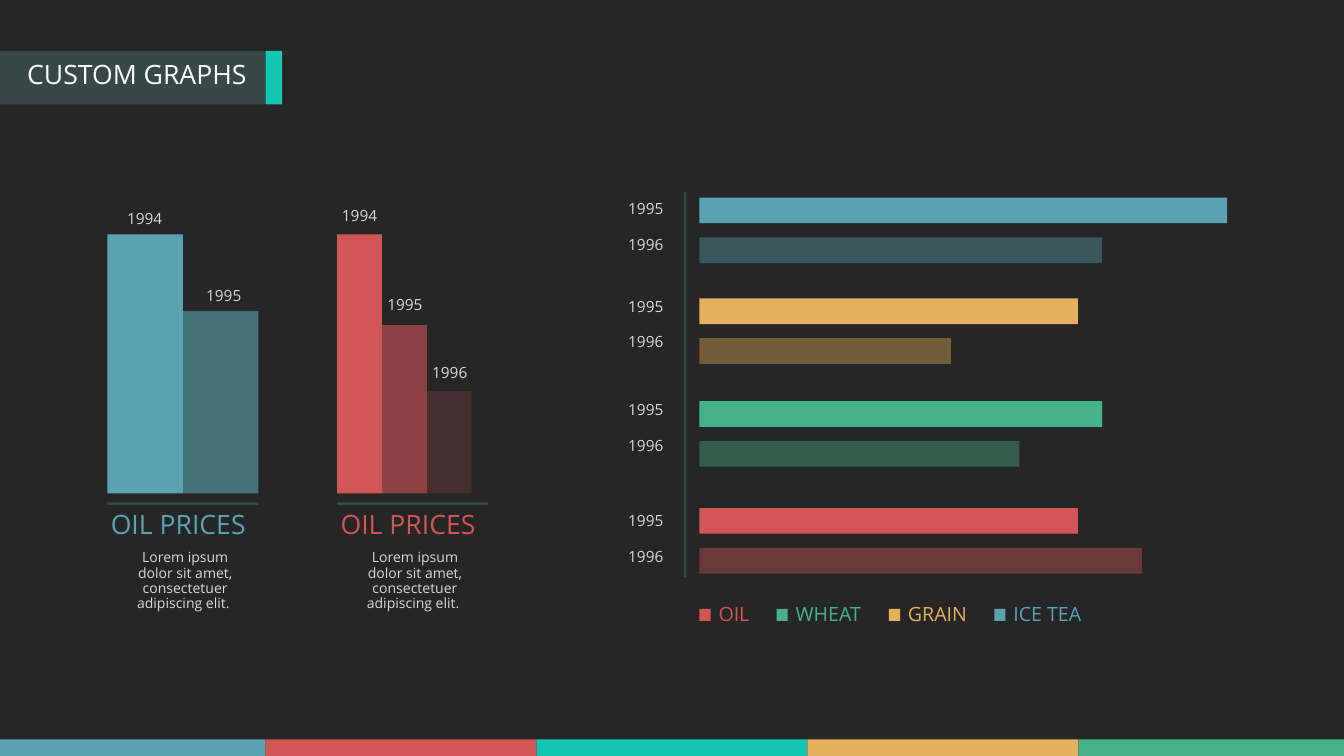
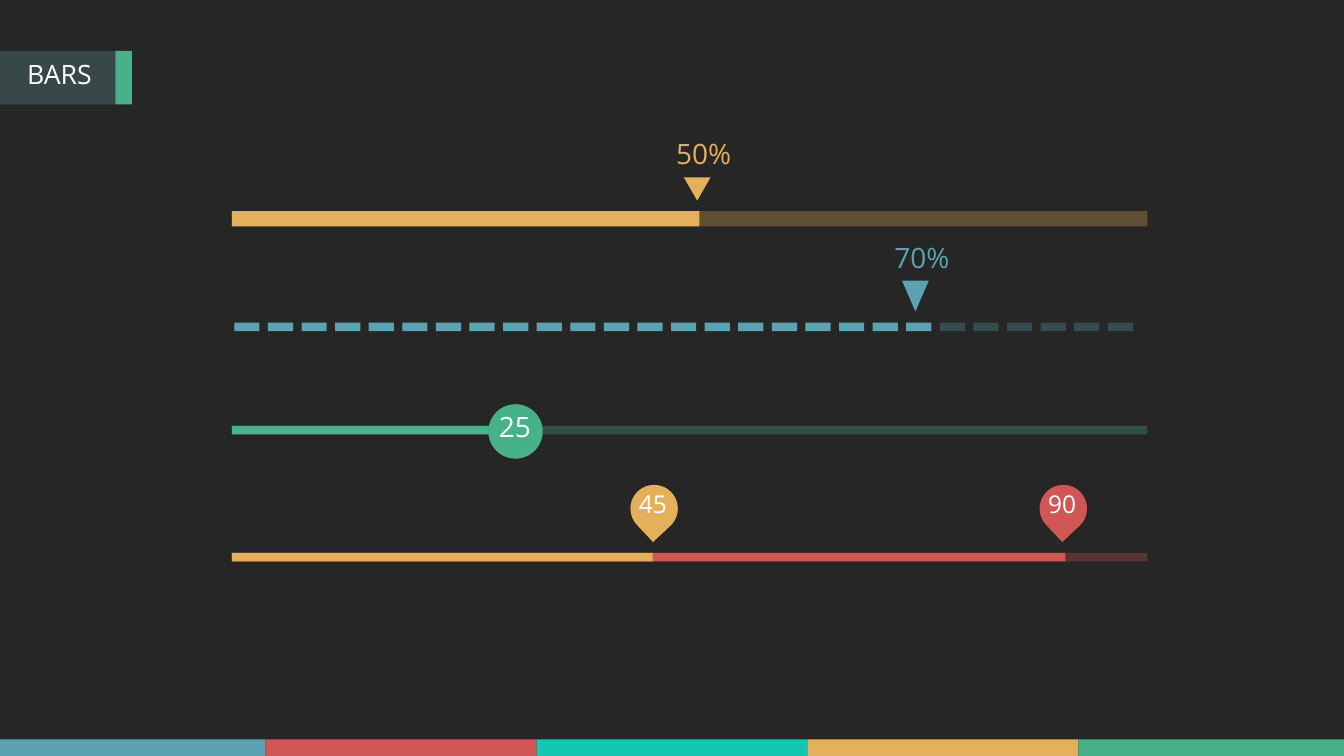
from pptx import Presentation
from pptx.dml.color import RGBColor
from pptx.enum.shapes import MSO_SHAPE as Shape
from pptx.enum.text import MSO_AUTO_SIZE as AutoSize, PP_ALIGN as Align
from pptx.oxml.ns import qn
from pptx.oxml.xmlchemy import OxmlElement
from pptx.util import Inches, Pt

WIDTH, HEIGHT = 26.67, 15
FONT = "Open Sans"
COLORS = {
    "background": "262626",
    "slate": "384849",
    "label": "D9D9D9",
    "white": "FFFFFF",
    "blue": "5BA2B2",
    "red": "D15656",
    "teal": "13C7B2",
    "yellow": "E5B05C",
    "green": "47B289",
}
FOOTER_COLORS = ["blue", "red", "teal", "yellow", "green"]
FOOTER_EDGES = [0, 5.27, 10.65, 16.02, 21.4, WIDTH]
DESCRIPTION = "Lorem ipsum dolor sit amet, consectetuer adipiscing elit. "


def add_block(slide, left, top, width, height, color, opacity=100, kind=Shape.RECTANGLE, rotation=0):
    """Add a flat filled shape without outline or shadow."""
    shape = slide.shapes.add_shape(kind, Inches(left), Inches(top), Inches(width), Inches(height))
    shape.shadow.inherit = False
    shape.rotation = rotation
    shape.line.fill.background()
    shape.fill.solid()
    shape.fill.fore_color.rgb = RGBColor.from_string(COLORS[color])
    if opacity < 100:
        alpha = OxmlElement("a:alpha")
        alpha.set("val", str(opacity * 1000))
        shape._element.spPr.find(qn("a:solidFill"))[0].append(alpha)
    return shape


def add_text(slide, left, top, width, height, text, size, color, align=Align.LEFT):
    """Add a wrapped, single-paragraph text box."""
    box = slide.shapes.add_textbox(Inches(left), Inches(top), Inches(width), Inches(height))
    frame = box.text_frame
    frame.word_wrap = True
    frame.auto_size = AutoSize.SHAPE_TO_FIT_TEXT
    frame.text = text
    paragraph = frame.paragraphs[0]
    paragraph.alignment = align
    paragraph.line_spacing = 0.9
    font = paragraph.runs[0].font
    font.name = FONT
    font.size = Pt(size)
    font.color.rgb = RGBColor.from_string(COLORS[color])


def add_year(slide, left, top, year):
    """Add a centred year label."""
    add_text(slide, left, top, 1.53, 0.47, year, 22, "label", Align.CENTER)


def add_footer(slide, top, height):
    """Draw the five-colour band along the bottom."""
    for color, left, right in zip(FOOTER_COLORS, FOOTER_EDGES, FOOTER_EDGES[1:]):
        add_block(slide, left, top, right - left, height, color)


def add_title(slide, top, width, text, accent):
    """Draw the title tab with its accent strip."""
    add_block(slide, 0, top, width, 1.06, "slate")
    add_block(slide, width, top, 0.33, 1.06, accent)
    add_text(slide, 0.44, top + 0.16, width - 0.44, 0.74, text, 38, "white")


def add_base_slide(presentation, title, tab_width, accent):
    """Add a blank slide with background, footer and title."""
    slide = presentation.slides.add_slide(presentation.slide_layouts[6])
    slide.background.fill.solid()
    slide.background.fill.fore_color.rgb = RGBColor.from_string(COLORS["background"])
    add_footer(slide, HEIGHT - 0.33, 0.33)
    add_title(slide, 1.01, tab_width, title, accent)
    return slide


def add_column_graph(slide, left, top, color, column_width, columns):
    """Draw touching columns with years above and a caption below."""
    base = top + 5.14
    for index, (year, height, opacity, shift, rise) in enumerate(columns):
        column_left = left + index * column_width
        add_block(slide, column_left, base - height, column_width, height, color, opacity)
        year_left = column_left + (column_width - 1.53) / 2 + shift
        add_year(slide, year_left, base - height - rise, year)
    add_block(slide, left, base + 0.18, 3, 0.05, "slate")
    add_text(slide, left - 0.03, base + 0.32, 3.07, 0.74, "OIL PRICES", 38, color)
    add_text(slide, left + 0.21, base + 1.09, 2.67, 1.45, DESCRIPTION, 20, "label", Align.CENTER)


def add_bar_graph(slide, left, top):
    """Draw paired horizontal bars beside a vertical axis."""
    groups = [
        ("blue", 0.11, 0.13, 10.47, 7.99),
        ("yellow", 2.11, 2.07, 7.51, 4.99),
        ("green", 4.15, 4.12, 7.99, 6.35),
        ("red", 6.27, 6.33, 7.51, 8.78),
    ]
    add_block(slide, left + 1.52, top, 0.05, 7.64, "slate")
    for color, bar_top, year_top, first, second in groups:
        bars = [("1995", first, 100), ("1996", second, 40)]
        for index, (year, length, opacity) in enumerate(bars):
            add_block(slide, left + 1.83, top + bar_top + index * 0.79, length, 0.51, color, opacity)
            add_year(slide, left, top + year_top + index * 0.71, year)


def add_legend(slide, left, top):
    """Draw the colour key in one row."""
    entries = [
        ("OIL", "red", 0, 1.11),
        ("WHEAT", "green", 1.53, 1.83),
        ("GRAIN", "yellow", 3.76, 1.83),
        ("ICE TEA", "blue", 5.85, 1.83),
    ]
    for name, color, offset, width in entries:
        add_block(slide, left + offset, top + 0.14, 0.22, 0.24, color)
        add_text(slide, left + offset + 0.28, top, width, 0.57, name, 28, color)


def add_track(slide, left, top, width, height, color, segments):
    """Draw a pale full-width track and the filled segments over it."""
    add_block(slide, left, top, width, height, color, 30)
    for segment_color, length in segments:
        add_block(slide, left, top, length, height, segment_color)


def add_pointer(slide, left, top, height, text, color):
    """Draw a percentage above a downward triangle."""
    add_text(slide, left - 0.25, top - 0.78, 1.47, 0.77, text, 40, color)
    add_block(slide, left, top, 0.53, height, color, kind=Shape.ISOSCELES_TRIANGLE, rotation=180)


def add_dashes(slide, left, top, count, filled, color):
    """Draw evenly spaced dashes, the later ones faded."""
    for index in range(count):
        opacity = 100 if index < filled else 30
        add_block(slide, left + index * 2 / 3, top, 0.5, 0.17, color, opacity)


def add_knob(slide, left, top, text, color):
    """Draw a round slider knob with its value."""
    add_block(slide, left, top, 1.08, 1.08, color, kind=Shape.OVAL)
    add_text(slide, left + 0.11, top + 0.14, 0.96, 0.77, text, 40, "white")


def add_pin(slide, left, top, text, color):
    """Draw a teardrop pin with its value."""
    add_block(slide, left, top, 0.94, 0.94, color, kind=Shape.TEAR, rotation=136.9)
    add_text(slide, left + 0.07, top + 0.1, 0.96, 0.69, text, 35, "white")


def build_graphs_slide(presentation):
    """Build the slide of column and bar graphs."""
    slide = add_base_slide(presentation, "CUSTOM GRAPHS", 5.27, "teal")
    add_column_graph(slide, 2.13, 4.65, "blue", 1.5, [
        ("1994", 5.14, 100, -0.01, 0.51),
        ("1995", 3.62, 60, 0.06, 0.51),
    ])
    add_column_graph(slide, 6.69, 4.65, "red", 0.89, [
        ("1994", 5.14, 100, 0, 0.56),
        ("1995", 3.34, 60, 0.01, 0.6),
        ("1996", 2.03, 20, 0.01, 0.56),
    ])
    add_bar_graph(slide, 12.05, 3.81)
    add_legend(slide, 13.88, 11.94)


def build_bars_slide(presentation):
    """Build the slide of progress bars."""
    slide = add_base_slide(presentation, "BARS", 2.29, "green")
    left, width = 4.6, 18.17
    add_track(slide, left, 4.19, width, 0.3, "yellow", [("yellow", 9.28)])
    add_pointer(slide, left + 8.97, 3.52, 0.46, "50%", "yellow")
    add_dashes(slide, left + 0.05, 6.4, 27, 21, "blue")
    add_pointer(slide, left + 13.3, 5.57, 0.61, "70%", "blue")
    add_track(slide, left, 8.45, width, 0.17, "green", [("green", 5.62)])
    add_knob(slide, left + 5.09, 8.02, "25", "green")
    add_track(slide, left, 10.97, width, 0.17, "red", [("red", 16.54), ("yellow", 8.35)])
    add_pin(slide, left + 16.03, 9.62, "90", "red")
    add_pin(slide, left + 7.91, 9.62, "45", "yellow")


def main():
    """Build and save the presentation."""
    presentation = Presentation()
    presentation.slide_width = Inches(WIDTH)
    presentation.slide_height = Inches(HEIGHT)
    build_graphs_slide(presentation)
    build_bars_slide(presentation)
    presentation.save("out.pptx")


if __name__ == "__main__":
    main()
